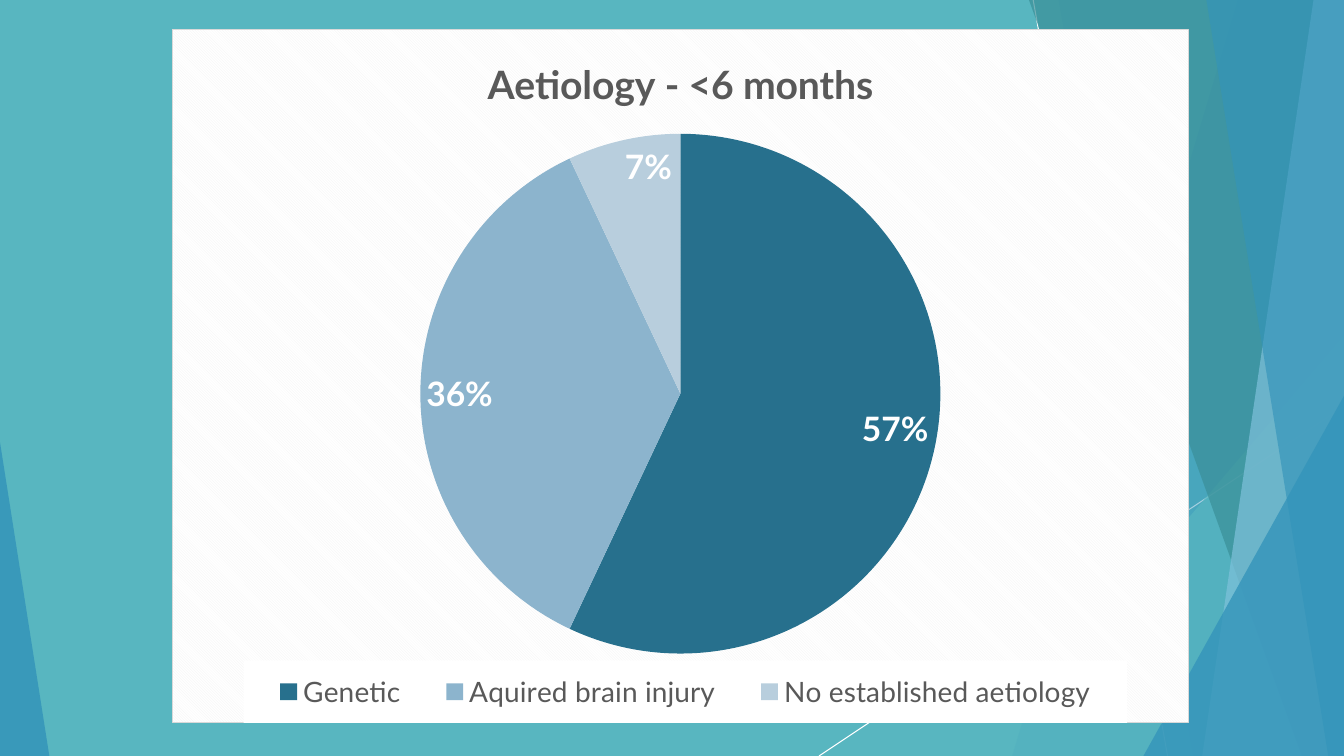
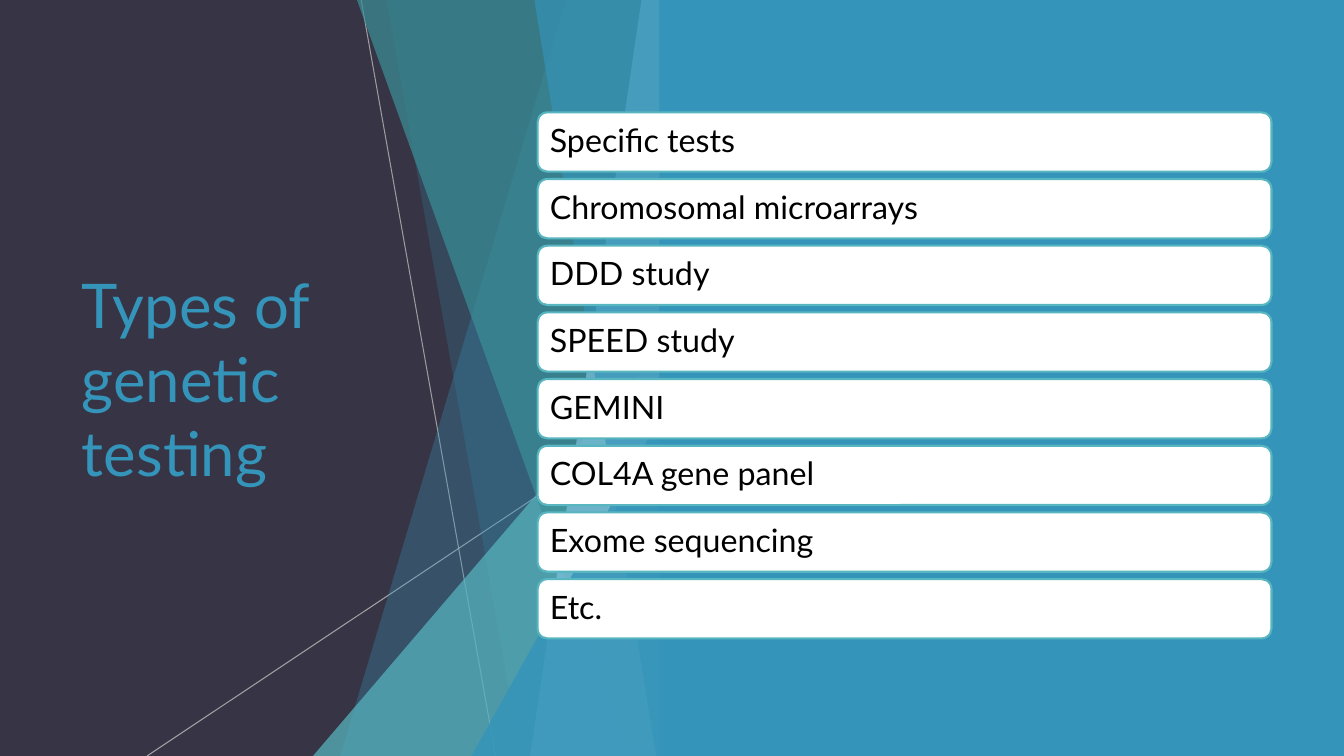
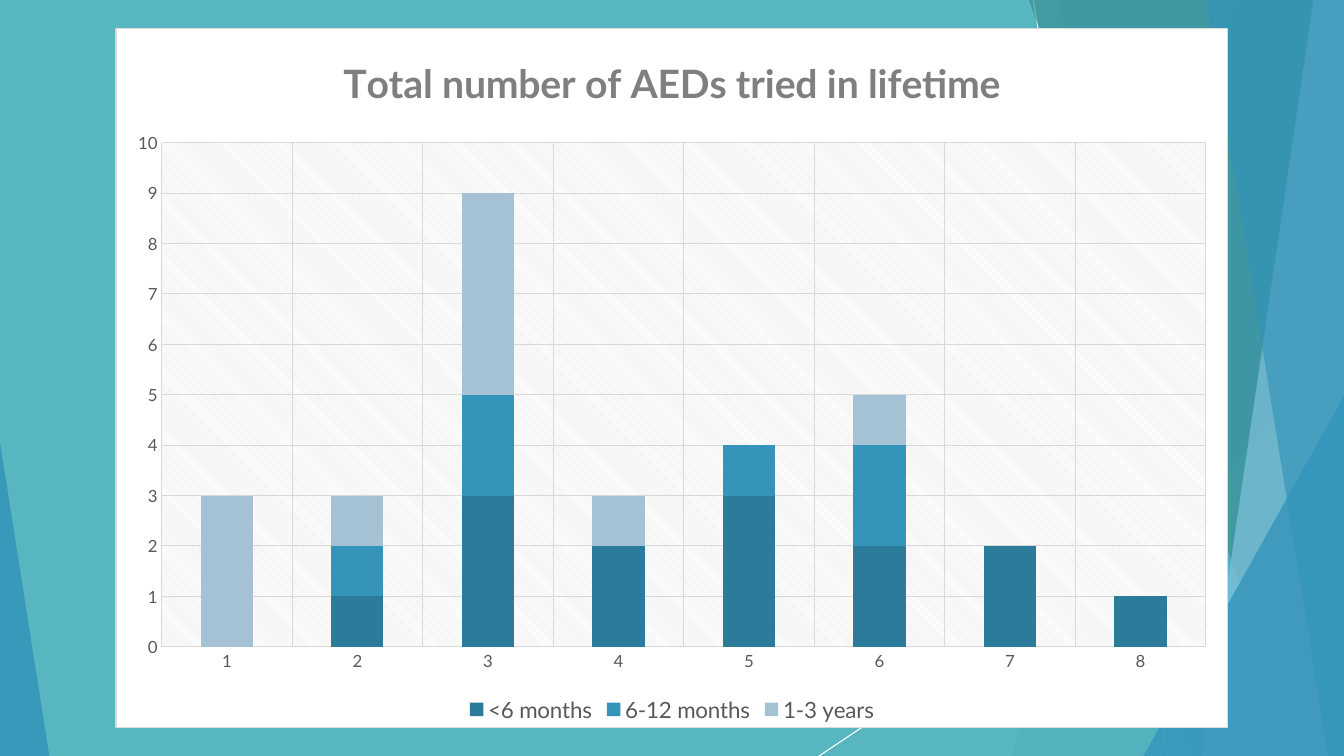
from pptx import Presentation
from pptx.chart.data import CategoryChartData
from pptx.dml.color import RGBColor as RGB
from pptx.dml.fill import FillFormat
from pptx.dml.line import LineFormat
from pptx.enum.chart import (XL_CHART_TYPE as CT, XL_LABEL_POSITION as LABEL_POS,
                             XL_LEGEND_POSITION as LEGEND_POS, XL_TICK_MARK as TICK)
from pptx.enum.dml import MSO_PATTERN as PATTERN
from pptx.enum.shapes import MSO_CONNECTOR as CONNECTOR, MSO_SHAPE as SHAPE
from pptx.enum.text import MSO_ANCHOR as ANCHOR, MSO_AUTO_SIZE as AUTO_SIZE, PP_ALIGN as ALIGN
from pptx.oxml import parse_xml
from pptx.oxml.ns import nsdecls, qn
from pptx.util import Pt
from lxml.etree import SubElement

PX = 9525
WIDTH, HEIGHT = 1280, 720
FONT = "Lato"

TEAL = RGB(0x58, 0xB6, 0xC0)
DARK_TEAL = RGB(0x3A, 0x8F, 0x98)
BLUE = RGB(0x34, 0x94, 0xBA)
LIGHT_BLUE = RGB(0x7F, 0xC1, 0xDB)
NAVY = RGB(0x37, 0x35, 0x45)
WHITE = RGB(0xFF, 0xFF, 0xFF)
BLACK = RGB(0x00, 0x00, 0x00)
SILVER = RGB(0xBF, 0xBF, 0xBF)
RULE_GREY = RGB(0xD9, 0xD9, 0xD9)
PALE_GREY = RGB(0xF2, 0xF2, 0xF2)
TEXT_GREY = RGB(0x59, 0x59, 0x59)
TITLE_GREY = RGB(0x7F, 0x7F, 0x7F)
PIE_COLORS = (RGB(0x27, 0x70, 0x8D), RGB(0x8C, 0xB4, 0xCD), RGB(0xB8, 0xCE, 0xDD))
COLUMN_COLORS = (RGB(0x2B, 0x7B, 0x9A), BLUE, RGB(0xA5, 0xC2, 0xD5))

# Facets are measured leftwards from the right edge of the art.
# Band: top reach, bottom reach. Wedge: width, height.
FACETS = (
    ("band", 101, 316, BLUE, 30),
    ("band", 272, 144, BLUE, 20),
    ("wedge", 342, 400, TEAL, 72),
    ("band", 300, 40, DARK_TEAL, 70),
    ("band", 29, 135, LIGHT_BLUE, 70),
    ("band", 131, 15, BLUE, 65),
    ("wedge", 191, 343, BLUE, 80),
)
# Reach and height of each end, then opacity on the dark slide.
RULES = ((296, 0, 168, 720, 75), (0, 387, 500, 720, 80))


def px(*lengths):
    return [round(n * PX) for n in lengths]


def set_font(font, size, color, bold=False):
    values = {"name": FONT, "size": Pt(size), "bold": bold}
    for name, value in values.items():
        setattr(font, name, value)
    font.color.rgb = color


def set_opacity(sp, percent):
    color = sp.element.spPr.xpath(".//a:srgbClr")[0]
    SubElement(color, qn("a:alpha"), val=str(percent * 1000))


def set_background(slide, color):
    slide.background.fill.solid()
    slide.background.fill.fore_color.rgb = color


def paint(sp, color, opacity=100):
    """Flat fill with no outline or shadow."""
    sp.shadow.inherit = False
    sp.fill.solid()
    sp.fill.fore_color.rgb = color
    sp.line.fill.background()
    if opacity < 100:
        set_opacity(sp, opacity)


def add_rule(slide, right, rule, color, opaque):
    x1, y1, x2, y2, opacity = rule
    line = slide.shapes.add_connector(CONNECTOR.STRAIGHT, *px(right - x1, y1, right - x2, y2))
    line.line.color.rgb = color
    line.line.width = Pt(0.75)
    if not opaque:
        set_opacity(line, opacity)
    SubElement(line.element.spPr, qn("a:effectLst"))


def add_band(slide, right, top, bottom):
    builder = slide.shapes.build_freeform(right - top, 0, scale=PX)
    builder.add_line_segments([(right, 0), (right, HEIGHT), (right - bottom, HEIGHT)])
    return builder.convert_to_shape()


def add_wedge(slide, left, width, height, apex):
    """Right triangle standing on the slide's bottom edge."""
    sp = slide.shapes.add_shape(SHAPE.ISOSCELES_TRIANGLE,
                                *px(left, HEIGHT - height, width, height))
    sp.adjustments[0] = apex
    return sp


def add_facets(slide, right, rule_color, opaque_rules=True):
    for rule in RULES:
        add_rule(slide, right, rule, rule_color, opaque_rules)
    for kind, a, b, color, opacity in FACETS:
        if kind == "band":
            sp = add_band(slide, right, a, b)
        else:
            sp = add_wedge(slide, right - a, a, b, 1)
        paint(sp, color, opacity)


def add_chart_slide(prs):
    slide = prs.slides.add_slide(prs.slide_layouts[6])
    set_background(slide, TEAL)
    add_facets(slide, WIDTH, WHITE)
    paint(add_wedge(slide, 0, 47, 299, 0), BLUE, 85)
    return slide


def new_area(element, after=None):
    """Give a chart part shape properties and return them."""
    props = parse_xml(f"<c:spPr {nsdecls('c', 'a')}/>")
    if after is None:
        element.append(props)
    else:
        after.addnext(props)
    return props


def fill_area(props, color=None, pattern=None):
    fill = FillFormat.from_fill_parent(props)
    if pattern is None:
        fill.solid()
        fill.fore_color.rgb = color
    else:
        fill.patterned()
        fill.pattern = pattern
        fill.fore_color.rgb = color
        fill.back_color.rgb = WHITE


def set_hairline(line):
    line.color.rgb = RULE_GREY
    line.width = Pt(0.75)


def set_layout(element, index, box, inner=False):
    """Fix a chart part at fractions (x, y, w, h) of the chart."""
    for old in element.findall(qn("c:layout")):
        element.remove(old)
    layout = parse_xml(f"<c:layout {nsdecls('c')}/>")
    manual = SubElement(layout, qn("c:manualLayout"))
    if inner:
        SubElement(manual, qn("c:layoutTarget"), val="inner")
    for mode in ("xMode", "yMode"):
        SubElement(manual, qn("c:" + mode), val="edge")
    for name, value in zip("xywh", box):
        SubElement(manual, qn("c:" + name), val=str(value))
    element.insert(index, layout)


def add_chart(slide, box, kind, categories, series, title, title_color, legend_size,
              color, pattern=None):
    data = CategoryChartData()
    data.categories = categories
    for name, values in series:
        data.add_series(name, values)
    chart = slide.shapes.add_chart(kind, *px(*box), data).chart
    set_font(chart.font, 10, WHITE)

    chart.has_title = True
    p = chart.chart_title.text_frame.paragraphs[0]
    r = p.add_run()
    r.text = title
    set_font(r.font, 28, title_color, True)
    chart.chart_title.include_in_layout = False

    chart.has_legend = True
    chart.legend.position = LEGEND_POS.BOTTOM
    chart.legend.include_in_layout = False
    set_font(chart.legend.font, legend_size, TEXT_GREY)

    space = chart.element
    props = new_area(space, after=space.find(qn("c:chart")))
    fill_area(props, color, pattern)
    set_hairline(LineFormat(props))
    return chart


def add_pie(slide, box):
    title = "Aetiology - <6 months"
    chart = add_chart(slide, box, CT.PIE,
                      ("Genetic", "Aquired brain injury", "No established aetiology"),
                      [(title, (57, 36, 7))], title, TEXT_GREY, 20,
                      PALE_GREY, PATTERN.DARK_DOWNWARD_DIAGONAL)
    plot = chart.plots[0]
    plot.vary_by_categories = True
    for i, color in enumerate(PIE_COLORS):
        fill = plot.series[0].points[i].format.fill
        fill.solid()
        fill.fore_color.rgb = color
    plot.has_data_labels = True
    labels = plot.data_labels
    values = {"show_percentage": True, "show_value": False, "number_format": "0%",
              "number_format_is_linked": False, "position": LABEL_POS.INSIDE_END}
    for name, value in values.items():
        setattr(labels, name, value)
    set_font(labels.font, 24, WHITE, True)

    set_layout(chart.element.find(".//" + qn("c:plotArea")), 0, (0.24, 0.15, 0.52, 0.75), True)
    legend = chart.element.find(".//" + qn("c:legend"))
    set_layout(legend, 1, (0.07, 0.91, 0.87, 0.09))
    fill_area(new_area(legend, after=legend.find(qn("c:overlay"))), WHITE)


def add_columns(slide, box):
    series = [("<6 months", (0, 1, 3, 2, 3, 2, 2, 1)),
              ("6-12 months", (0, 1, 2, 0, 1, 2, 0, 0)),
              ("1-3 years", (3, 1, 4, 1, 0, 1, 0, 0))]
    chart = add_chart(slide, box, CT.COLUMN_STACKED, [str(n) for n in range(1, 9)], series,
                      "Total number of AEDs tried in lifetime", TITLE_GREY, 16, WHITE)
    plot = chart.plots[0]
    plot.vary_by_categories = False
    plot.gap_width, plot.overlap = 150, 100
    for ser, color in zip(plot.series, COLUMN_COLORS):
        ser.format.fill.solid()
        ser.format.fill.fore_color.rgb = color
    for axis in (chart.category_axis, chart.value_axis):
        axis.has_major_gridlines = True
        axis.major_tick_mark = axis.minor_tick_mark = TICK.NONE
        set_hairline(axis.major_gridlines.format.line)
        set_hairline(axis.format.line)
        set_font(axis.tick_labels.font, 12, TEXT_GREY)
    scale = {"minimum_scale": 0, "maximum_scale": 10, "major_unit": 1}
    for name, value in scale.items():
        setattr(chart.value_axis, name, value)
    plot_area = chart.element.find(".//" + qn("c:plotArea"))
    fill_area(new_area(plot_area), RULE_GREY, PATTERN.LIGHT_DOWNWARD_DIAGONAL)


def format_frame(tf, margin_x, margin_y):
    values = {"word_wrap": True, "auto_size": AUTO_SIZE.NONE, "vertical_anchor": ANCHOR.MIDDLE,
              "margin_left": margin_x * PX, "margin_right": margin_x * PX,
              "margin_top": margin_y * PX, "margin_bottom": margin_y * PX}
    for name, value in values.items():
        setattr(tf, name, value)


def write_line(tf, text, size, color):
    p = tf.paragraphs[0]
    p.alignment = ALIGN.LEFT
    r = p.add_run()
    r.text = text
    set_font(r.font, size, color)
    return p


def place_title(slide, box, text):
    sp = slide.shapes.title
    sp.left, sp.top, sp.width, sp.height = px(*box)
    format_frame(sp.text_frame, 10, 5)
    write_line(sp.text_frame, text, 44, BLUE)


def add_cards(slide, box, items, gap=7):
    """Stack one rounded card per item, filling the box."""
    left, top, width, height = box
    card_height = (height - gap * (len(items) - 1)) / len(items)
    for i, text in enumerate(items):
        y = top + i * (card_height + gap)
        sp = slide.shapes.add_shape(SHAPE.ROUNDED_RECTANGLE, *px(left, y, width, card_height))
        paint(sp, WHITE)
        sp.line.color.rgb = TEAL
        sp.line.width = Pt(1.5)
        format_frame(sp.text_frame, 9, 5)
        write_line(sp.text_frame, text, 23, BLACK).line_spacing = 0.9


def add_list_slide(prs, title, items):
    slide = prs.slides.add_slide(prs.slide_layouts[5])
    set_background(slide, NAVY)
    place_title(slide, (68, 145, 372, 430), title)
    add_facets(slide, WIDTH // 2, SILVER, opaque_rules=False)
    panel = slide.shapes.add_shape(SHAPE.RECTANGLE, *px(628, 0, WIDTH - 628, HEIGHT))
    paint(panel, BLUE)
    add_cards(slide, (512, 107, 699, 501), items)


def main():
    prs = Presentation()
    prs.slide_width, prs.slide_height = px(WIDTH, HEIGHT)
    add_pie(add_chart_slide(prs), (164, 28, 968, 661))
    add_list_slide(prs, "Types of genetic testing",
                   ("Specific tests", "Chromosomal microarrays", "DDD study", "SPEED study",
                    "GEMINI", "COL4A gene panel", "Exome sequencing", "Etc."))
    add_columns(add_chart_slide(prs), (110, 27, 1060, 666))
    prs.save("out.pptx")


if __name__ == "__main__":
    main()
